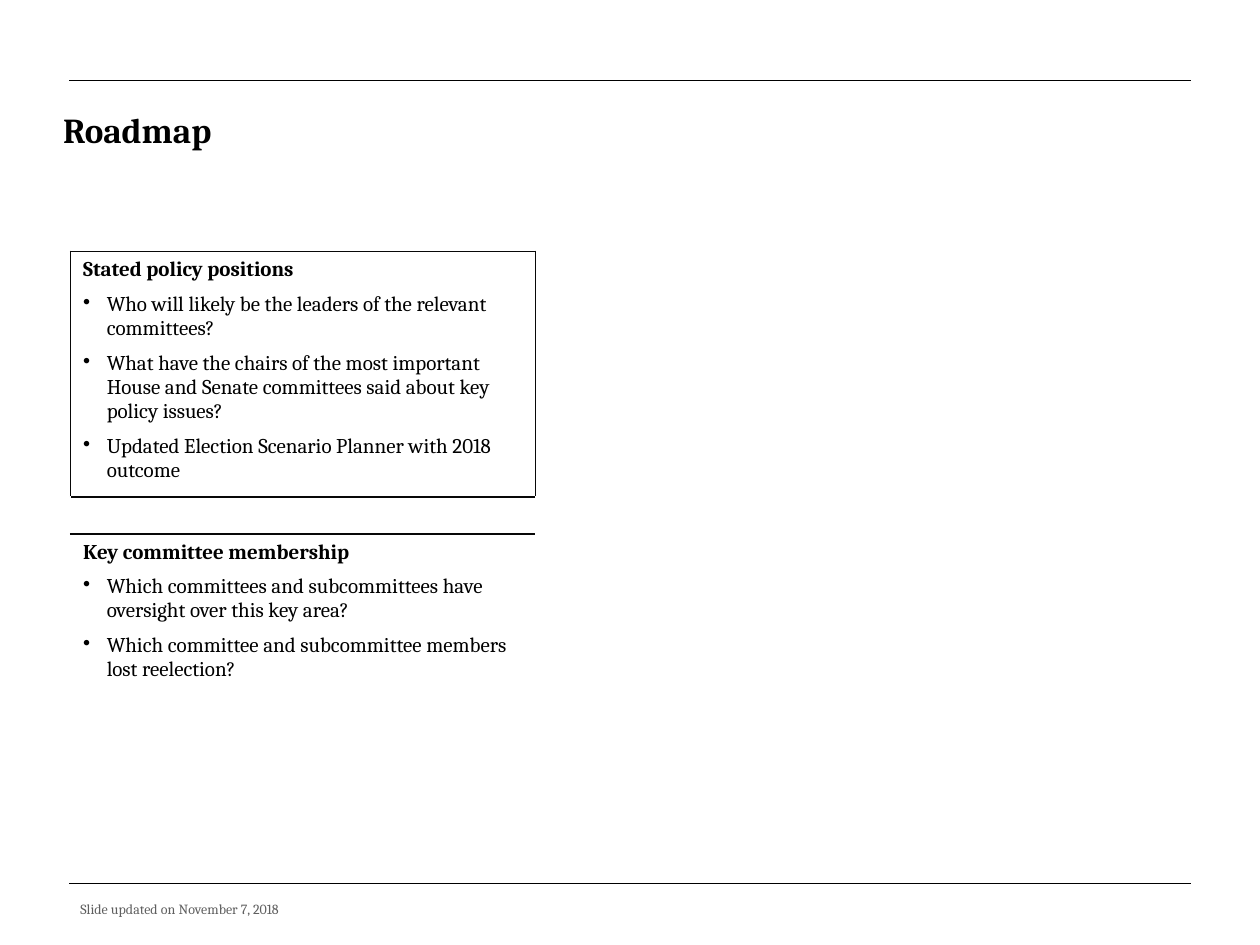
from lxml.etree import SubElement
from pptx import Presentation
from pptx.dml.color import RGBColor
from pptx.enum.shapes import MSO_CONNECTOR as Connector
from pptx.enum.text import MSO_ANCHOR as Anchor, PP_ALIGN as Align
from pptx.oxml import parse_xml
from pptx.oxml.ns import nsdecls, qn
from pptx.util import Pt

BLACK = RGBColor(0x00, 0x00, 0x00)
BORDER = RGBColor(0x08, 0x08, 0x08)
GRAY = RGBColor(0x5F, 0x5F, 0x5F)

POSITIONS = ("Stated policy positions", [
    "Who will likely be the leaders of the relevant committees?",
    "What have the chairs of the most important House and Senate committees said about key policy issues?",
    "Updated Election Scenario Planner with 2018 outcome",
])
MEMBERSHIP = ("Key committee membership", [
    "Which committees and subcommittees have oversight over this key area?",
    "Which committee and subcommittee members lost reelection?",
])


class RoadmapSlide:
    """Draws the roadmap elements on one slide in a shared style."""

    font_name = "Cambria"
    indent = Pt(13.5)

    def __init__(self, slide):
        self.slide = slide

    def style(self, paragraph, size, color=BLACK, bold=False):
        font = paragraph.font
        font.name, font.size, font.bold = self.font_name, Pt(size), bold
        font.color.rgb = color

    def rule(self, left, right, y):
        line = self.slide.shapes.add_connector(
            Connector.STRAIGHT, Pt(left), Pt(y), Pt(right), Pt(y))
        line.line.color.rgb = BLACK
        line.line.width = Pt(0.5)
        SubElement(line._element.spPr, qn("a:effectLst"))

    def title(self, text, left, top, width, height):
        heading = self.slide.shapes.title
        heading.left, heading.top = Pt(left), Pt(top)
        heading.width, heading.height = Pt(width), Pt(height)
        frame = heading.text_frame
        frame.text = text
        frame.vertical_anchor = Anchor.TOP
        paragraph = frame.paragraphs[0]
        paragraph.alignment = Align.LEFT
        paragraph.line_spacing = 0.9
        self.style(paragraph, 20, bold=True)

    def note(self, text, left, top, width, height):
        frame = self.slide.shapes.add_textbox(
            Pt(left), Pt(top), Pt(width), Pt(height)).text_frame
        frame.word_wrap = True
        frame.text = text
        self.style(frame.paragraphs[0], 8, GRAY)

    def topic(self, cell, heading, questions):
        frame = cell.text_frame
        frame.text = "\n".join([heading, *questions])
        for index, paragraph in enumerate(frame.paragraphs):
            paragraph.space_after = Pt(6)
            if index:
                properties = paragraph._p.get_or_add_pPr()
                properties.set("marL", str(self.indent))
                properties.set("indent", str(-self.indent))
                SubElement(properties, qn("a:buChar"), char="•")
            self.style(paragraph, 12, bold=index == 0)

    def borders(self, cell, sides):
        properties = cell._tc.get_or_add_tcPr()
        drawn = [side for side in "LRTB" if side in sides]
        for index, side in enumerate(drawn):
            properties.insert(index, parse_xml(
                f'<a:ln{side} {nsdecls("a")} w="{Pt(1)}"><a:solidFill>'
                f'<a:srgbClr val="{BORDER}"/></a:solidFill></a:ln{side}>'))

    def topic_table(self, topics, borders, left, top, widths, heights):
        table = self.slide.shapes.add_table(
            len(heights), len(widths), Pt(left), Pt(top),
            Pt(sum(widths)), Pt(sum(heights))).table
        table.first_row = table.horz_banding = False
        for column, width in zip(table.columns, widths):
            column.width = Pt(width)
        for row, height in zip(table.rows, heights):
            row.height = Pt(height)
        for cell in table.iter_cells():
            cell.fill.background()
        for cell in table.rows[1].cells:
            cell.margin_top = cell.margin_bottom = 0
            self.style(cell.text_frame.paragraphs[0], 8)
        for row, (heading, questions) in topics.items():
            self.topic(table.cell(row, 0), heading, questions)
        for (row, column), sides in borders.items():
            self.borders(table.cell(row, column), sides)


def main():
    deck = Presentation()
    deck.slide_width, deck.slide_height = Pt(720), Pt(540)
    roadmap = RoadmapSlide(deck.slides.add_slide(deck.slide_layouts[5]))
    for y in (504.7, 46.1):
        roadmap.rule(39.6, 680.4, y)
    roadmap.note("Slide updated on November 7, 2018", 38.9, 511.2, 316.8, 17.3)
    roadmap.title("Roadmap", 28.8, 61.2, 662.4, 50.4)
    roadmap.topic_table(
        {0: POSITIONS, 2: MEMBERSHIP},
        {(0, 0): "LRTB", (0, 1): "L", (1, 0): "TB", (2, 0): "T"},
        left=40.3, top=143.6, widths=(265.7, 22.3), heights=(136, 21, 96))
    deck.save("out.pptx")


if __name__ == "__main__":
    main()
